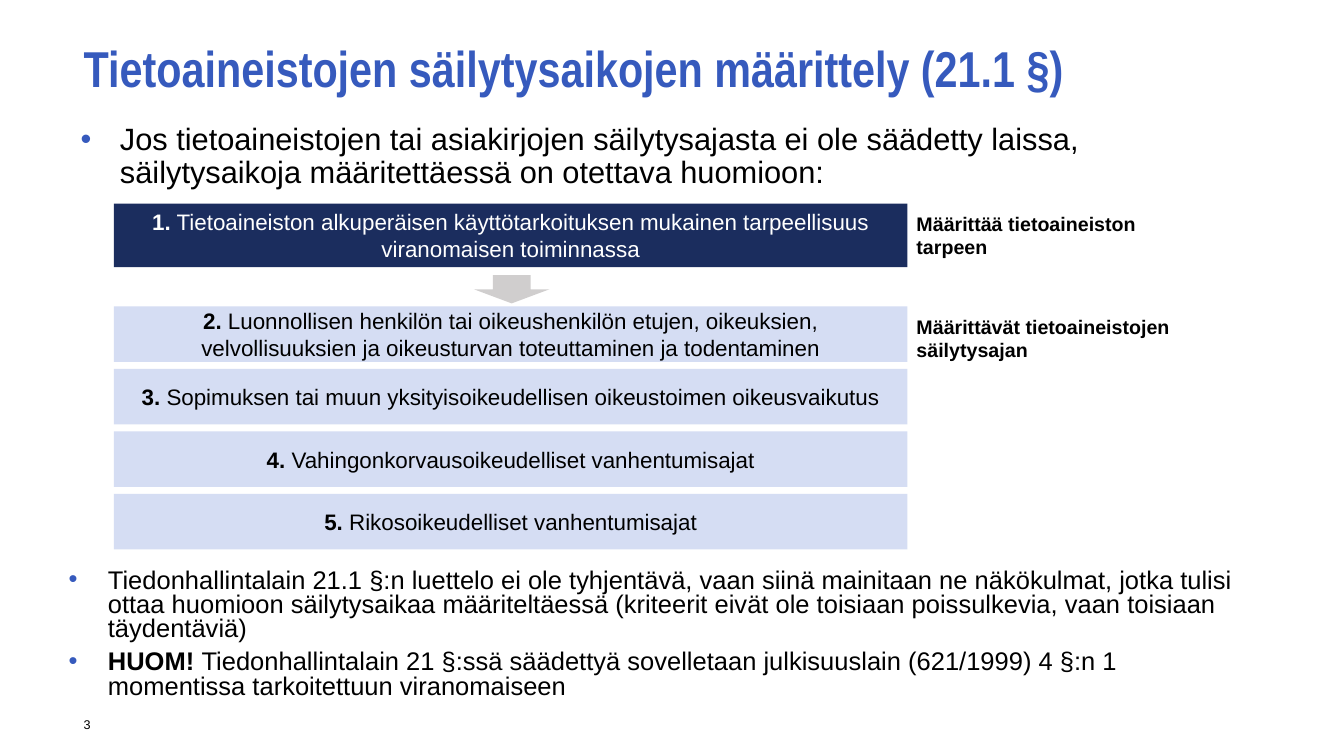
"""Build a slide on setting retention periods for data sets."""
import pptx
import pptx.util
import pptx.dml.color
import pptx.enum.shapes
import pptx.enum.text
import pptx.oxml.ns
import lxml.etree

Inches = pptx.util.Inches
Align = pptx.enum.text.PP_ALIGN
Anchor = pptx.enum.text.MSO_ANCHOR
Shape = pptx.enum.shapes.MSO_SHAPE


def color(code):
    return pptx.dml.color.RGBColor.from_string(code)


class Deck:
    blue, navy, pale, gray = "365ABD", "1B2D5E", "D5DDF3", "D0CECE"
    black, white = "000000", "FFFFFF"
    face = "Arial"

    def __init__(self):
        self.prs = pptx.Presentation()
        self.prs.slide_width = Inches(13.33)
        self.prs.slide_height = Inches(7.5)
        self.slide = self.prs.slides.add_slide(self.prs.slide_layouts[3])

    def place(self, shape, box):
        shape.left, shape.top, shape.width, shape.height = map(Inches, box)

    def frame(self, shape, anchor=Anchor.TOP):
        frame = shape.text_frame
        frame.word_wrap = True
        frame.auto_size = pptx.enum.text.MSO_AUTO_SIZE.NONE
        frame.vertical_anchor = anchor
        frame.margin_left = frame.margin_right = 0
        frame.margin_top = frame.margin_bottom = 0
        return frame

    def style(self, para, size, ink, bold=False, face=face):
        font = para.font
        font.name, font.size, font.bold = face, pptx.util.Pt(size), bold
        font.color.rgb = color(ink)

    def fill(self, para, lead, text):
        if lead:
            para.add_run().text = lead
            para.runs[0].font.bold = True
        para.add_run().text = text

    def title(self, text, box):
        shape = self.slide.shapes.title
        self.place(shape, box)
        para = self.frame(shape).paragraphs[0]
        para.alignment = Align.LEFT
        para.line_spacing = 0.9
        self.fill(para, "", text)
        self.style(para, 36, self.blue, True, "Arial Narrow")

    def bullet(self, para):
        props = para._p.get_or_add_pPr()
        indent = Inches(0.39)
        props.set("marL", str(indent))
        props.set("indent", str(-indent))
        name = pptx.oxml.ns.qn
        tint = lxml.etree.SubElement(props, name("a:buClr"))
        lxml.etree.SubElement(tint, name("a:srgbClr"), val=self.blue)
        lxml.etree.SubElement(props, name("a:buFont"), typeface=self.face)
        lxml.etree.SubElement(props, name("a:buChar"), char="•")

    def list(self, index, items, box, size, lines):
        shape = self.slide.placeholders[index]
        self.place(shape, box)
        frame = self.frame(shape)
        for i, (lead, text) in enumerate(items):
            para = frame.add_paragraph() if i else frame.paragraphs[0]
            para.line_spacing = lines
            para.space_before = pptx.util.Pt(6 if i else 0)
            self.bullet(para)
            self.fill(para, lead, text)
            self.style(para, size, self.black)

    def label(self, text, box, size, bold=False, anchor=Anchor.TOP):
        shape = self.slide.shapes.add_textbox(*map(Inches, box))
        para = self.frame(shape, anchor).paragraphs[0]
        self.fill(para, "", text)
        self.style(para, size, self.black, bold)

    def shape(self, kind, box, fill):
        shape = self.slide.shapes.add_shape(kind, *map(Inches, box))
        shape.shadow.inherit = False
        shape.fill.solid()
        shape.fill.fore_color.rgb = color(fill)
        shape.line.fill.background()
        return shape

    def bar(self, lead, text, box, fill, ink):
        shape = self.shape(Shape.RECTANGLE, box, fill)
        frame = shape.text_frame
        frame.word_wrap = True
        frame.vertical_anchor = Anchor.MIDDLE
        para = frame.paragraphs[0]
        para.alignment = Align.CENTER
        self.fill(para, lead, text)
        self.style(para, 16, ink)


def main():
    deck = Deck()
    deck.title("Tietoaineistojen säilytysaikojen määrittely (21.1 §)",
               (0.83, 0.44, 11.7, 1.15))
    deck.list(1, [("", "Jos tietoaineistojen tai asiakirjojen säilytysajasta ei ole "
                   "säädetty laissa, säilytysaikoja määritettäessä on otettava "
                   "huomioon:")], (0.8, 1.23, 11.7, 0.75), 22, 0.9)

    left, width = 1.13, 7.87
    deck.bar("1.", " Tietoaineiston alkuperäisen käyttötarkoituksen mukainen "
             "tarpeellisuus viranomaisen toiminnassa",
             (left, 2.02, width, 0.63), deck.navy, deck.white)
    deck.shape(Shape.DOWN_ARROW, (4.7, 2.73, 0.75, 0.28), deck.gray)
    rules = [
        "Luonnollisen henkilön tai oikeushenkilön etujen, oikeuksien, "
        "velvollisuuksien ja oikeusturvan toteuttaminen ja todentaminen",
        "Sopimuksen tai muun yksityisoikeudellisen oikeustoimen oikeusvaikutus",
        "Vahingonkorvausoikeudelliset vanhentumisajat",
        "Rikosoikeudelliset vanhentumisajat",
    ]
    for i, rule in enumerate(rules):
        deck.bar(f"{i + 2}.", f" {rule}", (left, 3.04 + 0.62 * i, width, 0.55),
                 deck.pale, deck.black)

    deck.label("Määrittää tietoaineiston tarpeen", (9.09, 2.1, 2.84, 0.47), 14, True)
    deck.label("Määrittävät tietoaineistojen säilytysajan",
               (9.09, 3.12, 2.93, 0.47), 14, True)
    deck.list(2, [
        ("", "Tiedonhallintalain 21.1 §:n luettelo ei ole tyhjentävä, vaan siinä "
         "mainitaan ne näkökulmat, jotka tulisi ottaa huomioon säilytysaikaa "
         "määriteltäessä (kriteerit eivät ole toisiaan poissulkevia, vaan toisiaan "
         "täydentäviä)"),
        ("HUOM! ", "Tiedonhallintalain 21 §:ssä säädettyä sovelletaan julkisuuslain "
         "(621/1999) 4 §:n 1 momentissa tarkoitettuun viranomaiseen"),
    ], (0.68, 5.65, 11.7, 1.4), 18.2, 0.8)
    deck.label("3", (0.83, 7.05, 0.36, 0.27), 9, anchor=Anchor.MIDDLE)
    deck.prs.save("out.pptx")


if __name__ == "__main__":
    main()
